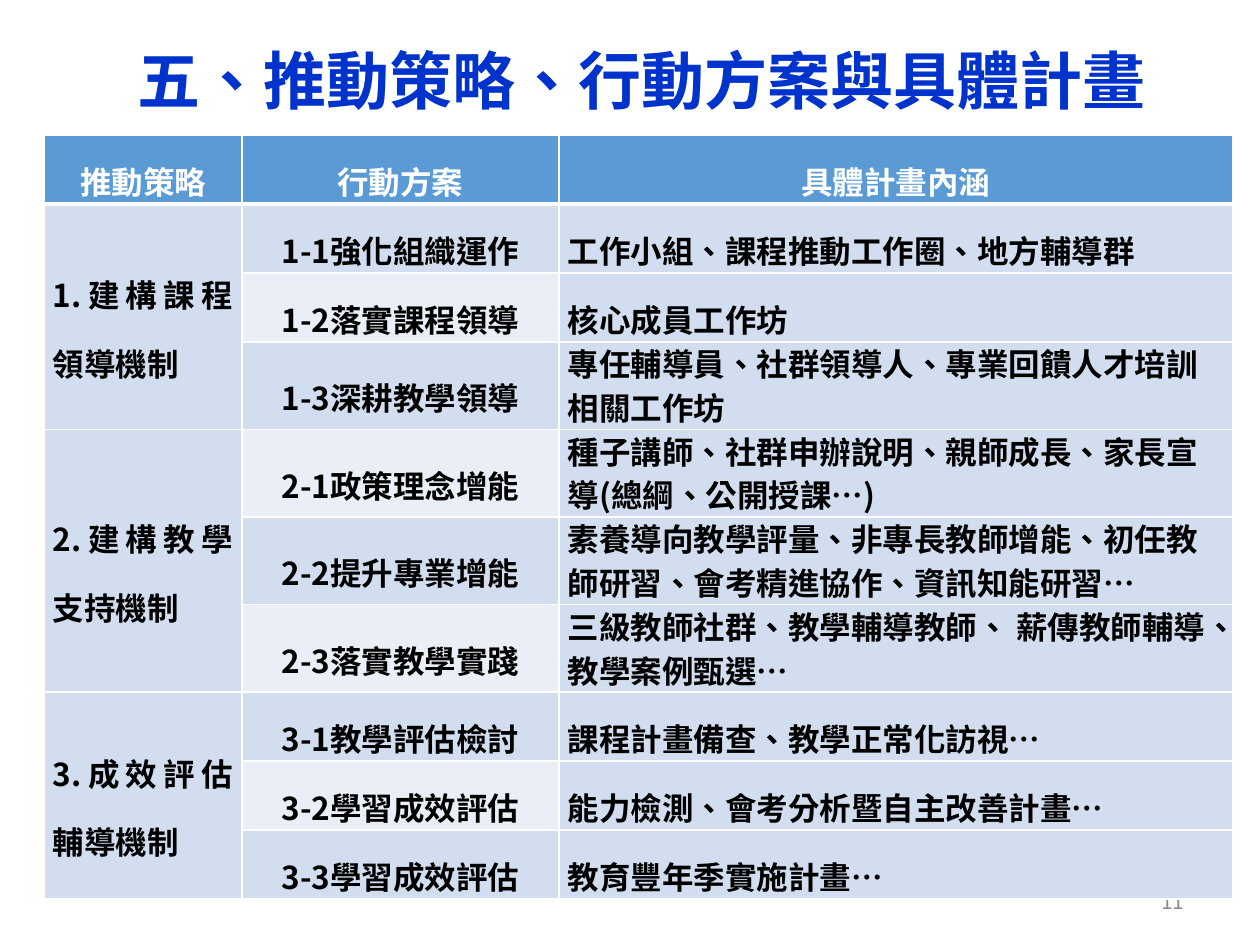
from lxml import etree
from pptx import Presentation
from pptx import util as u
from pptx.dml.color import RGBColor
from pptx.enum import text
from pptx.oxml.ns import qn

SCALE = 914400 / 126  # EMU per px
FONT = "Noto Sans CJK SC"
COLORS = {
    "title": "0033CC",
    "number": "8C8C8C",
    "header": "5B9BD5",
    "band": "D2DEEF",
    "light": "EAEFF7",
    "white": "FFFFFF",
    "black": "000000",
}
ALIGN = text.PP_ALIGN


def px(length):
    return u.Emu(round(length * SCALE))


def write(frame, words, size, color, bold, **paragraph_format):
    paragraph = frame.paragraphs[0]
    for name, value in paragraph_format.items():
        setattr(paragraph, name, value)
    run = paragraph.add_run()
    run.text = words
    for name, value in {"size": u.Pt(size), "bold": bold, "name": FONT}.items():
        setattr(run.font, name, value)
    run.font.color.rgb = RGBColor.from_string(COLORS[color])
    properties = run._r.get_or_add_rPr()
    properties.set("lang", "zh-TW")
    etree.SubElement(properties, qn("a:ea"), typeface=FONT)


presentation = Presentation()
presentation.slide_width, presentation.slide_height = px(1260), px(945)
slide = presentation.slides.add_slide(presentation.slide_layouts[5])

title = slide.shapes.title
title.left, title.top, title.width, title.height = px(74), px(0), px(1134), px(158)
title.text_frame.vertical_anchor = text.MSO_ANCHOR.MIDDLE
write(title.text_frame, "五、推動策略、行動方案與具體計畫", 36, "title", True, alignment=ALIGN.CENTER)

number = slide.shapes.add_textbox(px(903), px(876), px(294), px(50))
number.text_frame.word_wrap = True
number.text_frame.vertical_anchor = text.MSO_ANCHOR.MIDDLE
write(number.text_frame, "11", 12, "number", False, alignment=ALIGN.RIGHT)

HEADINGS = ("推動策略", "行動方案", "具體計畫內涵")
STRATEGIES = {
    "1.建構課程領導機制": [
        ("1-1強化組織運作", "工作小組、課程推動工作圈、地方輔導群"),
        ("1-2落實課程領導", "核心成員工作坊"),
        ("1-3深耕教學領導", "專任輔導員、社群領導人、專業回饋人才培訓相關工作坊"),
    ],
    "2.建構教學支持機制": [
        ("2-1政策理念增能", "種子講師、社群申辦說明、親師成長、家長宣導(總綱、公開授課…)"),
        ("2-2提升專業增能", "素養導向教學評量、非專長教師增能、初任教師研習、會考精進協作、資訊知能研習…"),
        ("2-3落實教學實踐", "三級教師社群、教學輔導教師、 薪傳教師輔導、教學案例甄選…"),
    ],
    "3.成效評估輔導機制": [
        ("3-1教學評估檢討", "課程計畫備查、教學正常化訪視…"),
        ("3-2學習成效評估", "能力檢測、會考分析暨自主改善計畫…"),
        ("3-3學習成效評估", "教育豐年季實施計畫…"),
    ],
}
rows = [HEADINGS]
for strategy, actions in STRATEGIES.items():
    for index, (action, plan) in enumerate(actions):
        rows.append(("" if index else strategy, action, plan))

ROW_HEIGHT = 69
COLUMN_WIDTHS = (198, 317, 674)
COLUMN_ALIGN = (ALIGN.JUSTIFY, ALIGN.CENTER, ALIGN.LEFT)
LONG_PLAN = 20  # characters that fit on one line

table = slide.shapes.add_table(
    len(rows), 3, px(44), px(135), px(sum(COLUMN_WIDTHS)), px(ROW_HEIGHT * len(rows))
).table
for column, width in zip(table.columns, COLUMN_WIDTHS):
    column.width = px(width)
for row in table.rows:
    row.height = px(ROW_HEIGHT)
for top in (1, 4, 7):
    table.cell(top, 0).merge(table.cell(top + 2, 0))

for row_index, row in enumerate(rows):
    header = row_index == 0
    for column_index, words in enumerate(row):
        cell = table.cell(row_index, column_index)
        cell_format = {
            "vertical_anchor": text.MSO_ANCHOR.MIDDLE,
            "margin_left": px(9),
            "margin_right": px(9),
            "margin_top": 0,
            "margin_bottom": 0,
        }
        for name, value in cell_format.items():
            setattr(cell, name, value)

        properties = cell._tc.get_or_add_tcPr()
        for side in ("L", "R", "T", "B"):
            points = 3 if header and side == "B" else 1
            line = etree.SubElement(properties, qn(f"a:ln{side}"), w=str(u.Pt(points)))
            fill = etree.SubElement(line, qn("a:solidFill"))
            etree.SubElement(fill, qn("a:srgbClr"), val=COLORS["white"])

        light = column_index == 1 and row_index % 2 == 0
        fill_name = "header" if header else "light" if light else "band"
        cell.fill.solid()
        cell.fill.fore_color.rgb = RGBColor.from_string(COLORS[fill_name])

        if words:
            write(
                cell.text_frame, words, 18, "white" if header else "black", True,
                alignment=ALIGN.CENTER if header else COLUMN_ALIGN[column_index],
                line_spacing=u.Pt(25) if len(words) > LONG_PLAN else 1.5,
                space_after=u.Pt(10),
            )

presentation.save("out.pptx")
